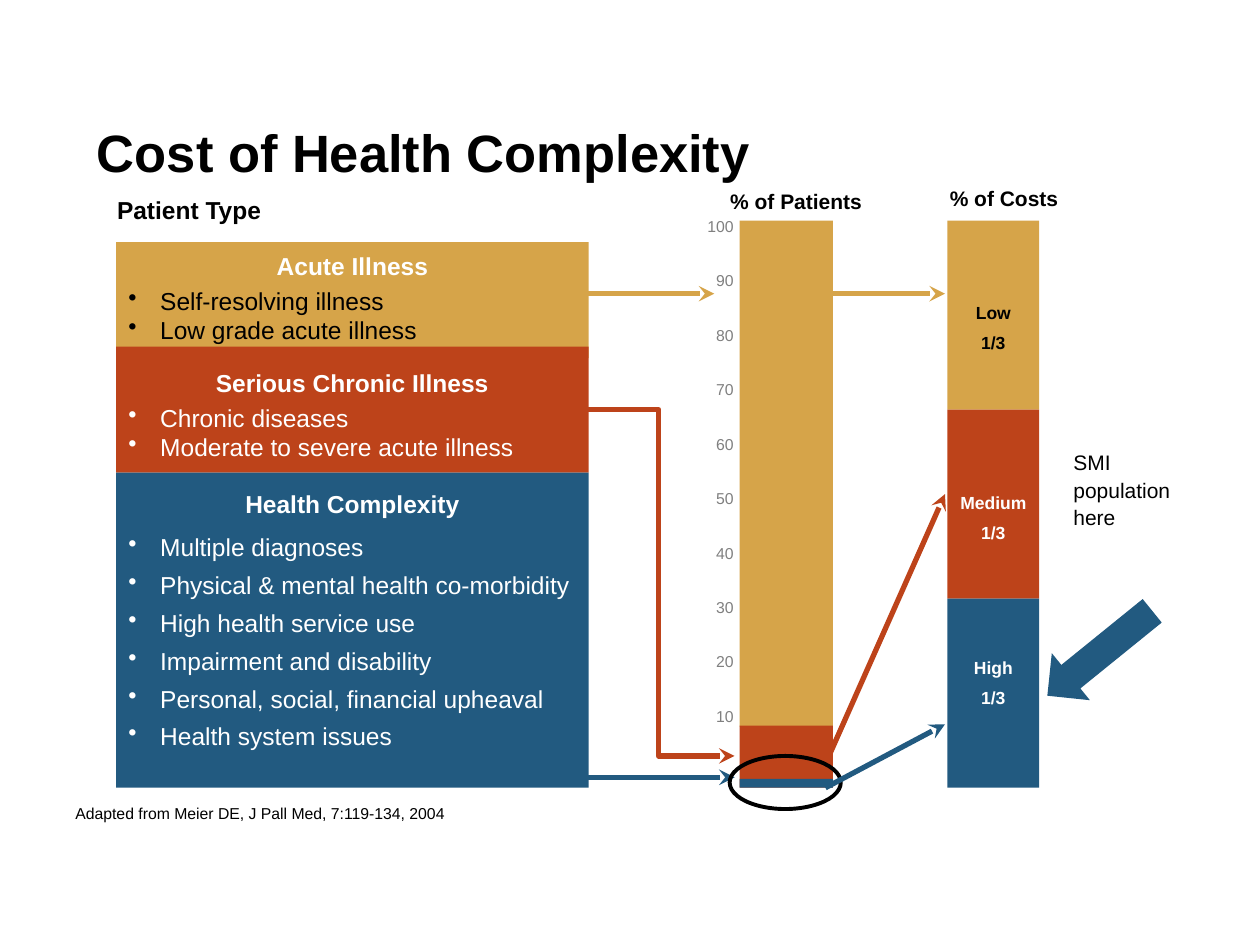
from pptx import Presentation
from pptx.dml.color import RGBColor
from pptx.enum.shapes import MSO_CONNECTOR, MSO_SHAPE
from pptx.enum.text import MSO_ANCHOR, PP_ALIGN
from pptx.oxml.ns import qn
from pptx.util import Cm, Pt
from lxml.etree import SubElement

GOLD = RGBColor(0xD6, 0xA4, 0x49)
RED = RGBColor(0xBD, 0x43, 0x1A)
BLUE = RGBColor(0x22, 0x5A, 0x80)
GREY = RGBColor(0x80, 0x80, 0x80)
BLACK = RGBColor(0, 0, 0)
WHITE = RGBColor(255, 255, 255)


class Sheet:
    font = "Arial"
    weight = 3

    def __init__(self, deck):
        self.slide = deck.slides.add_slide(deck.slide_layouts[5])
        self.shapes = self.slide.shapes

    def style(self, para, size, color, bold=False, align=PP_ALIGN.LEFT):
        para.alignment = align
        para.font.name = self.font
        para.font.size = Pt(size)
        para.font.bold = bold
        para.font.color.rgb = color

    def title(self, text, *box):
        head = self.shapes.title
        head.left, head.top, head.width, head.height = map(Cm, box)
        frame = head.text_frame
        frame.text = text
        frame.vertical_anchor = MSO_ANCHOR.BOTTOM
        self.style(frame.paragraphs[0], 30, BLACK, True)

    def frame(self, box, wrap=True):
        frame = self.shapes.add_textbox(*map(Cm, box)).text_frame
        frame.word_wrap = wrap
        return frame

    def text(self, lines, box, size, color=BLACK, bold=False,
             align=PP_ALIGN.LEFT, gap=0, lead=None, wrap=True):
        frame = self.frame(box, wrap)
        frame.text = "\n".join(lines)
        for row, para in enumerate(frame.paragraphs):
            self.style(para, size, color, bold, align)
            para.space_before = Pt(gap if row else 0)
            if lead:
                para.line_spacing = lead

    def list(self, head, items, box, color, gap):
        frame = self.frame(box)
        frame.text = "\n".join([head] + items)
        top, *rest = frame.paragraphs
        self.style(top, 14, WHITE, True, PP_ALIGN.CENTER)
        top.space_after = Pt(gap)
        for para in rest:
            para.space_after = Pt(gap)
            if para is rest[0]:
                para.line_spacing = 1.2
            props = para._p.get_or_add_pPr()
            props.set("marL", str(Cm(0.64)))
            props.set("indent", str(Cm(-0.64)))
            SubElement(props, qn("a:buChar"), char="•")
            self.style(para, 14, color)

    def block(self, color, box, kind=MSO_SHAPE.RECTANGLE, turn=0):
        shape = self.shapes.add_shape(kind, *map(Cm, box))
        shape.shadow.inherit = False
        shape.fill.solid()
        shape.fill.fore_color.rgb = color
        shape.line.fill.background()
        shape.rotation = turn

    def ring(self, *box):
        shape = self.shapes.add_shape(MSO_SHAPE.OVAL, *map(Cm, box))
        shape.shadow.inherit = False
        shape.fill.background()
        shape.line.color.rgb = BLACK
        shape.line.width = Pt(2.25)

    def point(self, shape, color):
        shape.line.color.rgb = color
        shape.line.width = Pt(self.weight)
        line = shape.element.spPr.find(qn("a:ln"))
        SubElement(line, qn("a:tailEnd"), type="stealth")

    def arrow(self, color, *ends):
        line = self.shapes.add_connector(MSO_CONNECTOR.STRAIGHT, *map(Cm, ends))
        self.point(line, color)
        SubElement(line.element.spPr, qn("a:effectLst"))

    def route(self, color, *spots):
        first, *rest = [(Cm(x), Cm(y)) for x, y in spots]
        form = self.shapes.build_freeform(*first)
        form.add_line_segments(rest, close=False)
        shape = form.convert_to_shape()
        shape.shadow.inherit = False
        shape.fill.background()
        self.point(shape, color)


def main():
    deck = Presentation()
    deck.slide_width, deck.slide_height = Cm(25.4), Cm(19.05)
    sheet = Sheet(deck)
    sheet.title("Cost of Health Complexity", 1.7, 2.26, 23.06, 1.55)

    scale = [str(mark) for mark in range(100, 0, -10)]
    sheet.text(scale, (13.49, 4.24, 1.55, 11.58), 9, GREY,
               align=PP_ALIGN.RIGHT, gap=20.3)
    sheet.text(["Patient Type"], (2.11, 3.81, 6.8, 0.86), 14, bold=True)
    for label, left, top in (("% of Patients", 14.17, 3.68),
                             ("% of Costs", 18.36, 3.61)):
        sheet.text([label], (left, top, 3.76, 0.76), 12, bold=True,
                   align=PP_ALIGN.CENTER)

    types = [
        ("Acute Illness", ["Self-resolving illness", "Low grade acute illness"],
         GOLD, BLACK, 4.88, 2.34, 4.93, 0),
        ("Serious Chronic Illness",
         ["Chronic diseases", "Moderate to severe acute illness"],
         RED, WHITE, 6.99, 2.54, 7.29, 0),
        ("Health Complexity",
         ["Multiple diagnoses", "Physical & mental health co-morbidity",
          "High health service use", "Impairment and disability",
          "Personal, social, financial upheaval", "Health system issues"],
         BLUE, WHITE, 9.53, 6.35, 9.73, 4.8),
    ]
    for head, items, fill, ink, top, high, start, gap in types:
        sheet.block(fill, (2.34, top, 9.53, high))
        sheet.list(head, items, (2.34, start, 9.53, top + high - start), ink, gap)

    sheet.arrow(GOLD, 11.3, 5.92, 14.4, 5.92)
    sheet.route(RED, (10.87, 8.26), (13.28, 8.26), (13.28, 15.24), (14.81, 15.24))
    sheet.arrow(BLUE, 11.73, 15.67, 14.81, 15.67)

    for fill, top, high in ((GOLD, 4.45, 10.2), (RED, 14.63, 1.25),
                            (BLUE, 15.7, 0.18)):
        sheet.block(fill, (14.91, top, 1.88, high))
    sheet.ring(14.71, 15.24, 2.24, 1.07)
    sheet.arrow(RED, 16.71, 15.24, 19.05, 9.96)

    costs = [("Low", GOLD, BLACK, 5.97), ("Medium", RED, WHITE, 9.8),
             ("High", BLUE, WHITE, 13.13)]
    for row, (name, fill, ink, top) in enumerate(costs):
        sheet.block(fill, (19.1, 4.45 + 3.81 * row, 1.85, 3.81))
        sheet.text([name, "1/3"], (19.1, top, 1.85, 1.32), 10, ink, True,
                   PP_ALIGN.CENTER, gap=5, wrap=False)
    sheet.arrow(BLUE, 16.64, 15.88, 19.05, 14.6)
    sheet.arrow(GOLD, 16.71, 5.92, 19.05, 5.92)

    sheet.text(["SMI population here"], (21.39, 8.89, 2.97, 1.93), 12, lead=1.1)
    sheet.block(BLUE, (21.56, 11.81, 1.22, 2.72), MSO_SHAPE.DOWN_ARROW, 51)
    sheet.text(["Adapted from Meier DE, J Pall Med, 7:119-134, 2004"],
               (1.27, 16.08, 10.36, 0.64), 9)
    deck.save("out.pptx")


if __name__ == "__main__":
    main()
